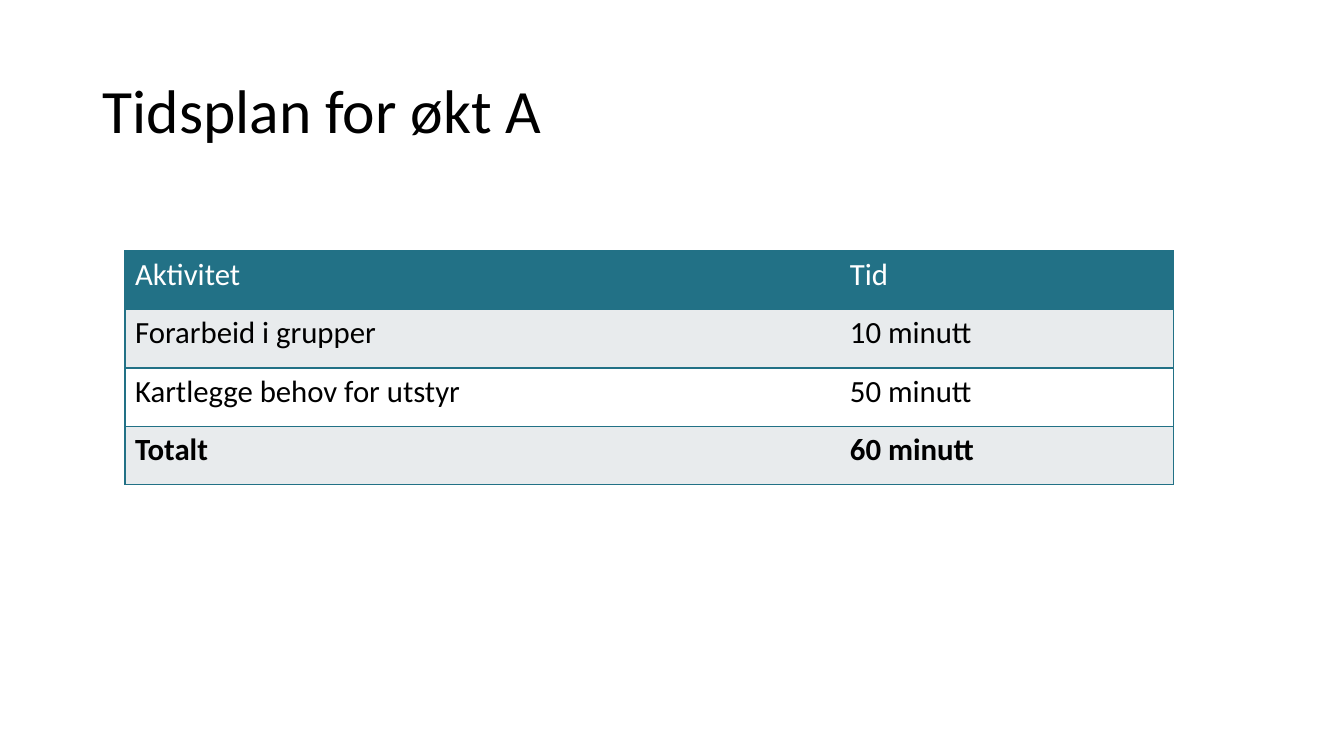
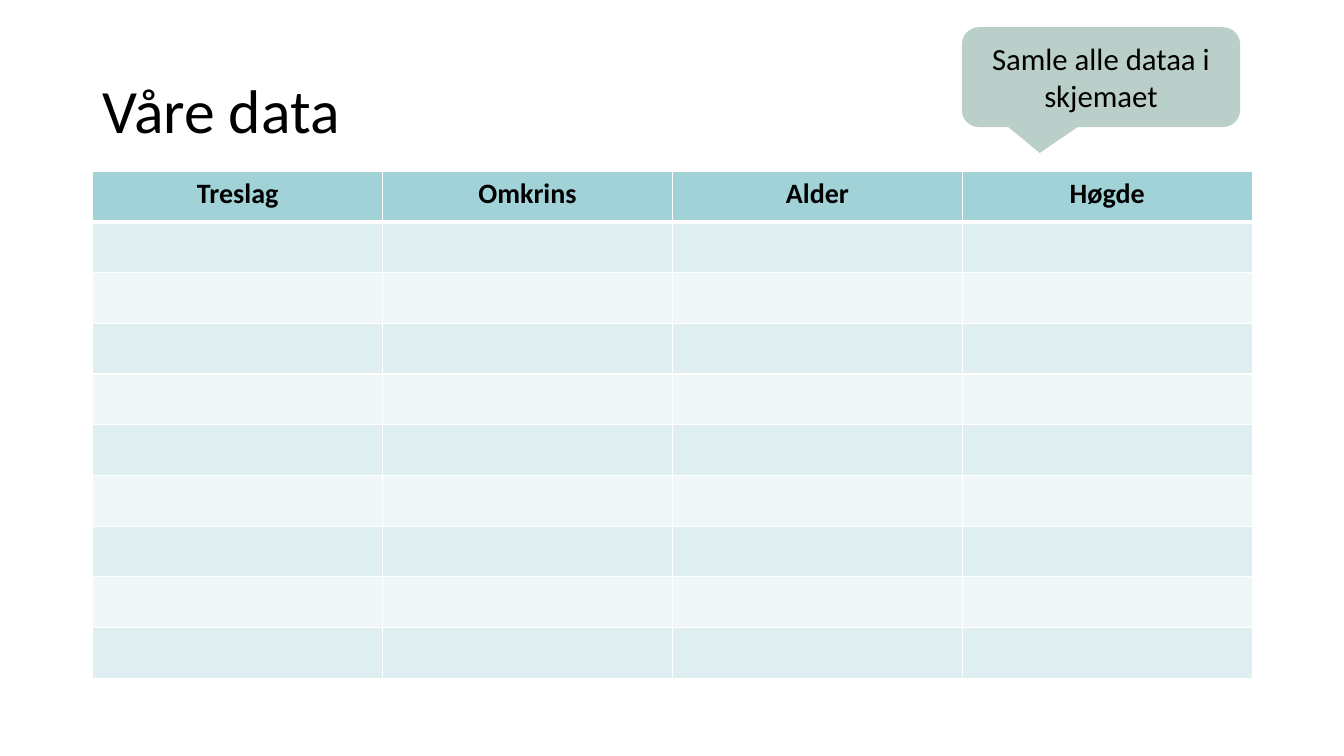
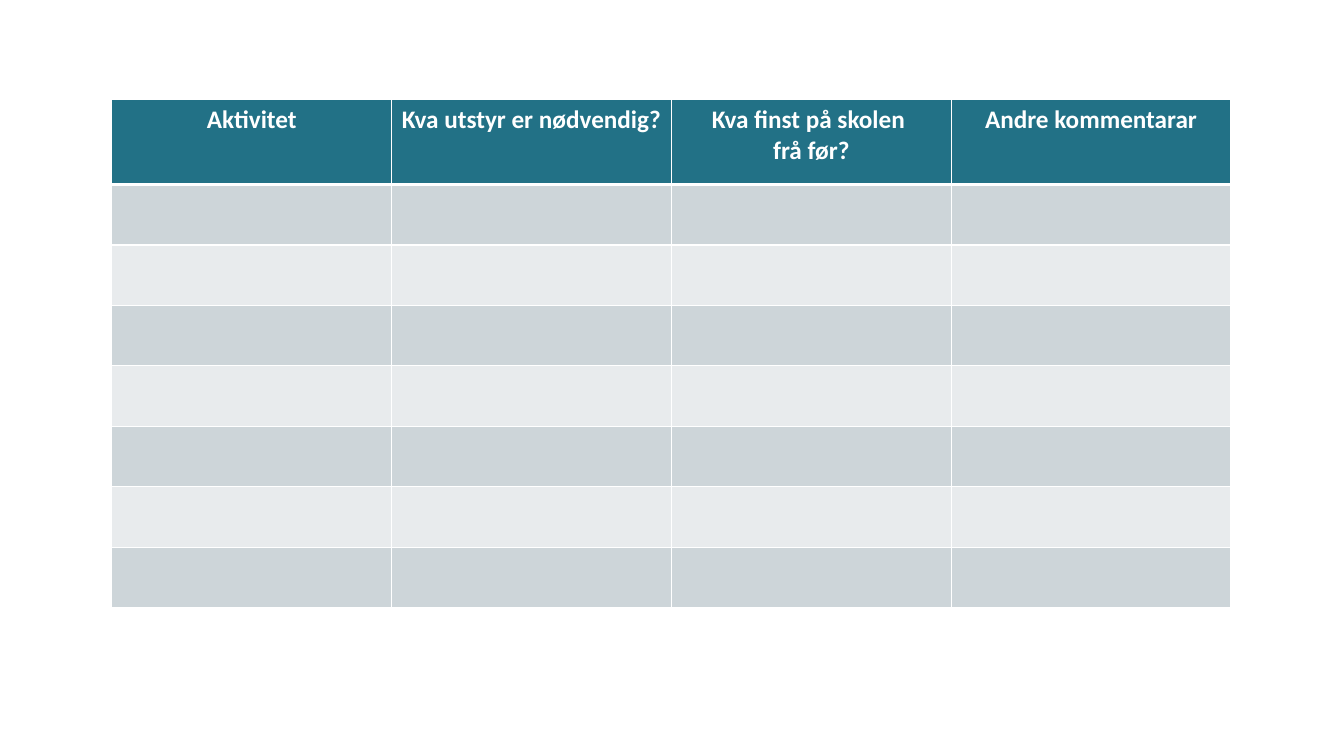
from lxml.etree import SubElement
from pptx import Presentation
from pptx.dml.color import RGBColor
from pptx.enum.shapes import MSO_SHAPE
from pptx.enum.text import MSO_ANCHOR, PP_ALIGN
from pptx.oxml.ns import qn
from pptx.util import Inches, Pt

COLORS = {
    "text": "000000",
    "white": "FFFFFF",
    "teal": "227186",
    "aqua": "A0D2D8",
    "aqua_band": "DFEEF0",
    "aqua_light": "F0F7F8",
    "gray_band": "CDD5D9",
    "gray_light": "E8EBED",
    "sage": "BACFCA",
}
FONT = "Calibri"
TITLE_BOX = (0.92, 0.4, 11.5, 1.45)


def rgb(color):
    return RGBColor.from_string(COLORS[color])


def inches(box):
    return [Inches(length) for length in box]


def write(frame, text, size, color="text", bold=False, align=PP_ALIGN.LEFT):
    paragraph = frame.paragraphs[0]
    paragraph.text = text
    paragraph.alignment = align
    font_format = {"name": FONT, "size": Pt(size), "bold": bold}
    for run in paragraph.runs:
        for attribute, value in font_format.items():
            setattr(run.font, attribute, value)
        run.font.color.rgb = rgb(color)
    return paragraph


def add_title(slide, text):
    frame = slide.shapes.add_textbox(*inches(TITLE_BOX)).text_frame
    frame.word_wrap = True
    frame.vertical_anchor = MSO_ANCHOR.MIDDLE
    write(frame, text, 44).line_spacing = 0.9


def add_callout(slide, box, text):
    callout = slide.shapes.add_shape(
        MSO_SHAPE.ROUNDED_RECTANGULAR_CALLOUT, *inches(box))
    callout.shadow.inherit = False
    callout.fill.solid()
    callout.fill.fore_color.rgb = rgb("sage")
    callout.line.fill.background()
    for index, adjustment in enumerate((-0.22, 0.76, 0.17)):
        callout.adjustments[index] = adjustment
    callout.text_frame.word_wrap = True
    callout.text_frame.vertical_anchor = MSO_ANCHOR.MIDDLE
    write(callout.text_frame, text, 22, align=PP_ALIGN.CENTER)


def set_borders(cell, borders):
    properties = cell._tc.get_or_add_tcPr()
    for side in "LRTB":
        color, width = borders[side]
        line = SubElement(properties, qn(f"a:ln{side}"), w=str(Pt(width)))
        if color is None:
            SubElement(line, qn("a:noFill"))
        else:
            fill = SubElement(line, qn("a:solidFill"))
            SubElement(fill, qn("a:srgbClr"), val=COLORS[color])


def add_grid(slide, left, top, widths, heights):
    table = slide.shapes.add_table(
        len(heights), len(widths),
        *inches((left, top, sum(widths), sum(heights)))).table
    for column, width in zip(table.columns, widths):
        column.width = Inches(width)
    for row, height in zip(table.rows, heights):
        row.height = Inches(height)
    return table


def paint(cell, borders, color):
    set_borders(cell, borders)
    cell.fill.solid()
    cell.fill.fore_color.rgb = rgb(color)


def add_schedule(slide, left, top, widths, row_height, rows):
    table = add_grid(slide, left, top, widths, [row_height] * len(rows))
    edge, no_edge = ("teal", 1), (None, 0)
    last_row, last_column = len(rows) - 1, len(widths) - 1
    for r, row in enumerate(rows):
        fill = "teal" if r == 0 else ("white", "gray_light")[r % 2]
        for c, text in enumerate(row):
            cell = table.cell(r, c)
            paint(cell, {
                "L": edge if c == 0 else no_edge,
                "R": edge if c == last_column else no_edge,
                "T": edge,
                "B": edge,
            }, fill)
            write(cell.text_frame, text, 22,
                  color="white" if r == 0 else "text", bold=r == last_row)


def add_form(slide, left, top, width, heights, headings, size,
             head_fill, head_text, bands):
    widths = [width / len(headings)] * len(headings)
    table = add_grid(slide, left, top, widths, heights)
    thin, thick = ("white", 1), ("white", 3)
    for r in range(len(heights)):
        borders = {
            "L": thin,
            "R": thin,
            "T": thick if r == 1 else thin,
            "B": thick if r == 0 else thin,
        }
        for c, heading in enumerate(headings):
            cell = table.cell(r, c)
            paint(cell, borders, head_fill if r == 0 else bands[(r - 1) % 2])
            if r == 0:
                write(cell.text_frame, heading, size, head_text, True,
                      PP_ALIGN.CENTER)


def main():
    deck = Presentation()
    deck.slide_width, deck.slide_height = Inches(13.33), Inches(7.5)
    blank = deck.slide_layouts[6]
    schedule, data, equipment = [
        deck.slides.add_slide(blank) for _ in range(3)]

    add_title(schedule, "Tidsplan for økt A")
    add_schedule(schedule, 1.24, 2.49, (7.09, 3.31), 0.58, [
        ("Aktivitet", "Tid"),
        ("Forarbeid i grupper", "10 minutt"),
        ("Kartlegge behov for utstyr", "50 minutt"),
        ("Totalt", "60 minutt"),
    ])

    add_title(data, "Våre data")
    add_form(data, 0.92, 1.7, 11.5, [5.03 / 10] * 10,
             ("Treslag", "Omkrins", "Alder", "Høgde"), 20,
             "aqua", "text", ("aqua_band", "aqua_light"))
    add_callout(data, (9.54, 0.27, 2.76, 0.99), "Samle alle dataa i skjemaet")

    add_form(equipment, 1.11, 0.99, 11.1, [0.84] + [0.6] * 7,
             ("Aktivitet", "Kva utstyr er nødvendig?",
              "Kva finst på skolen \vfrå før?", "Andre kommentarar"), 18,
             "teal", "white", ("gray_band", "gray_light"))

    deck.save("out.pptx")


if __name__ == "__main__":
    main()
